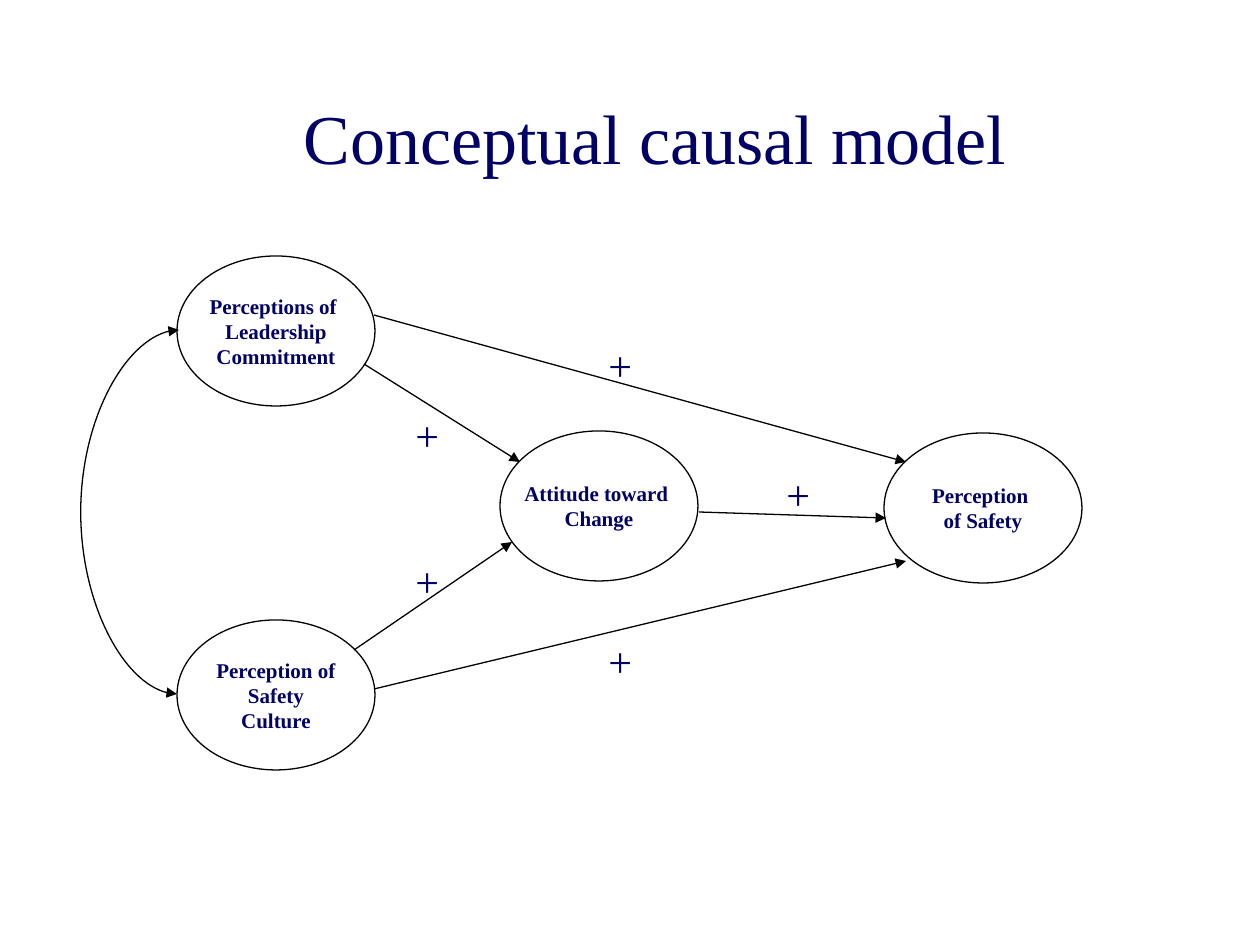
from lxml import etree
from pptx import Presentation
from pptx.dml.color import RGBColor
from pptx.enum.shapes import MSO_CONNECTOR as Connector, MSO_SHAPE as Shape
from pptx.enum.text import MSO_ANCHOR as Anchor, MSO_AUTO_SIZE as AutoSize, PP_ALIGN as Align
from pptx.oxml.ns import qn
from pptx.util import Inches, Pt

COLORS = {"text": "000066", "line": "000000"}
FONT = "Times New Roman"
PX = Inches(1) / 126

TITLE = "Conceptual causal model"
TITLE_BOX = (25, 88, 1260, 97)

FACTOR_SIZE = (198, 150)
FACTORS = [  # left, top, lines of text
    (177, 256, "Perceptions of \nLeadership\nCommitment"),
    (177, 620, "Perception of\nSafety\nCulture"),
    (500, 431, "Attitude toward \nChange"),
    (884, 433, "Perception \nof Safety"),
]

EFFECTS = [  # x and y of the start, then of the arrowhead
    (354, 650, 512, 542),
    (364, 364, 520, 462),
    (699, 512, 886, 518),
    (374, 315, 906, 462),
    (374, 689, 906, 561),
]

SIGN_SIZE = (49, 63)
SIGNS = [(596, 333), (403, 403), (596, 629), (403, 549), (774, 462)]

CORRELATION = (179, 330, 177, 694)
CORRELATION_LEFT = 80


def px(*values):
    return [round(value * PX) for value in values]


def color(name):
    return RGBColor.from_string(COLORS[name])


def write(shape, text, size, bold=False, align=Align.CENTER):
    text_frame = shape.text_frame
    text_frame.text = text
    for paragraph in text_frame.paragraphs:
        paragraph.alignment = align
        for run in paragraph.runs:
            run.font.name = FONT
            run.font.size = Pt(size)
            run.font.bold = bold
            run.font.color.rgb = color("text")
    return text_frame


def style_line(line):
    line.color.rgb = color("line")
    line.width = Pt(0.75)


def add_arrow(slide, kind, ends, heads):
    connector = slide.shapes.add_connector(kind, *px(*ends))
    style_line(connector.line)
    properties = connector._element.spPr
    outline = properties.find(qn("a:ln"))
    for head in heads:
        etree.SubElement(outline, qn(f"a:{head}"), type="triangle")
    etree.SubElement(properties, qn("a:effectLst"))
    return connector


def add_factor(slide, left, top, text):
    ellipse = slide.shapes.add_shape(Shape.OVAL, *px(left, top, *FACTOR_SIZE))
    ellipse.shadow.inherit = False
    ellipse.fill.background()
    style_line(ellipse.line)
    text_frame = write(ellipse, text, 12, bold=True)
    text_frame.word_wrap = False
    text_frame.vertical_anchor = Anchor.MIDDLE


def add_sign(slide, left, top):
    box = slide.shapes.add_textbox(*px(left, top, *SIGN_SIZE))
    text_frame = write(box, "+", 24, align=Align.LEFT)
    text_frame.word_wrap = False
    text_frame.auto_size = AutoSize.SHAPE_TO_FIT_TEXT


def add_correlation(slide):
    """Curve with two arrowheads that bulges out to CORRELATION_LEFT."""
    curve = add_arrow(slide, Connector.CURVE, CORRELATION, ["headEnd", "tailEnd"])
    start, _, end, _ = CORRELATION
    bulge = round(100000 * (start - CORRELATION_LEFT) / (start - end))
    adjustments = curve._element.spPr.find(qn("a:prstGeom")).get_or_add_avLst()
    etree.SubElement(adjustments, qn("a:gd"), name="adj1", fmla=f"val {bulge}")


def main():
    presentation = Presentation()
    presentation.slide_width, presentation.slide_height = Inches(10), Inches(7.5)
    slide = presentation.slides.add_slide(presentation.slide_layouts[5])

    title = slide.shapes.title
    title.left, title.top, title.width, title.height = px(*TITLE_BOX)
    text_frame = write(title, TITLE, 40)
    text_frame.vertical_anchor = Anchor.TOP
    text_frame.auto_size = AutoSize.SHAPE_TO_FIT_TEXT

    for ends in EFFECTS:
        add_arrow(slide, Connector.STRAIGHT, ends, ["tailEnd"])
    for place in SIGNS:
        add_sign(slide, *place)
    for factor in FACTORS:
        add_factor(slide, *factor)
    add_correlation(slide)

    presentation.save("out.pptx")


if __name__ == "__main__":
    main()
